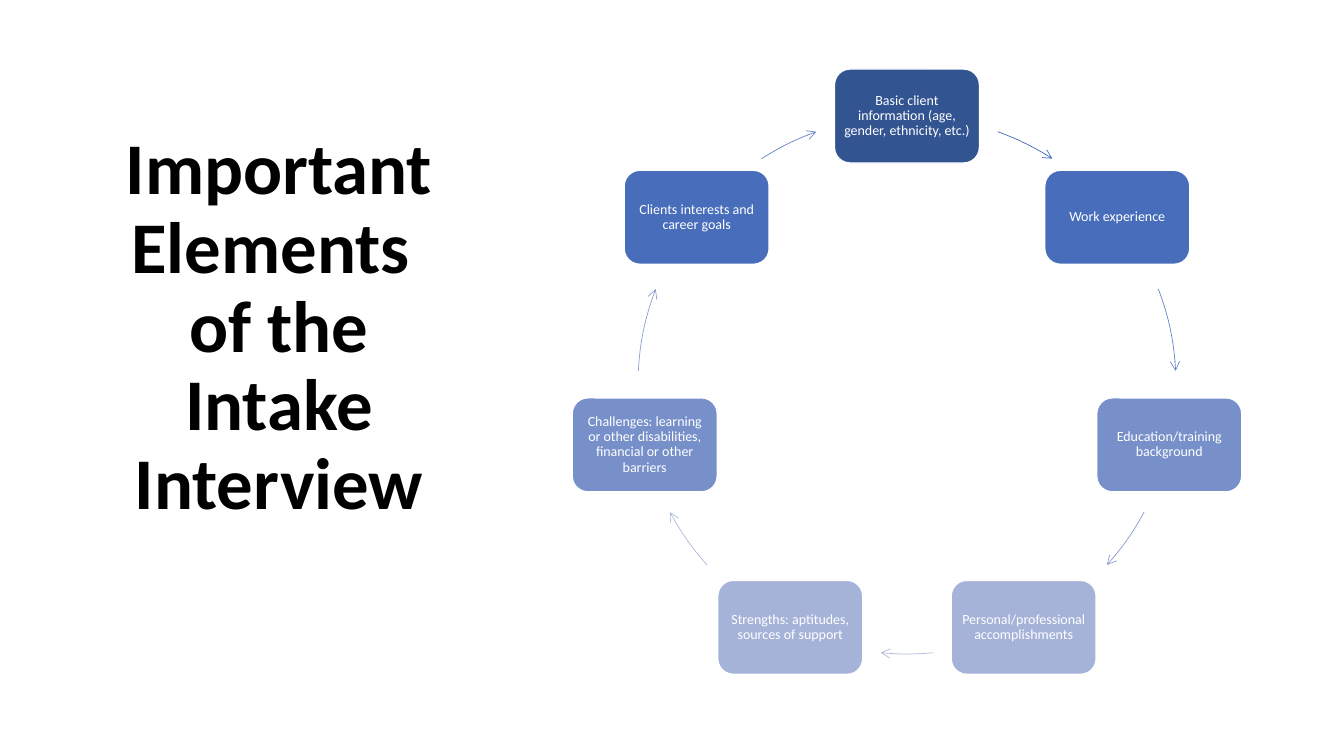
import math

from lxml import etree
from pptx import Presentation
from pptx.dml.color import RGBColor
from pptx.enum.shapes import MSO_SHAPE
from pptx.enum.text import MSO_ANCHOR, PP_ALIGN
from pptx.oxml.ns import qn
from pptx.util import Pt

ROUNDED = MSO_SHAPE.ROUNDED_RECTANGLE
ARC = MSO_SHAPE.ARC
CENTER = PP_ALIGN.CENTER
MIDDLE = MSO_ANCHOR.MIDDLE

EMU_PER_PX = 914400 / 100.8
FONT = "Calibri"
COLORS = {
    "title": "000000", "white": "FFFFFF",
    "navy": "325491", "blue": "476DBB", "soft": "7790C9", "pale": "A6B3D9",
    "arrow_blue": "416DBB", "arrow_mid": "6685C6",
    "arrow_soft": "8BA0D1", "arrow_pale": "AFBBDE",
}

# Clockwise from the top: text, box colour, colour of the arrow that follows
STEPS = [
    ("Basic client information (age, gender, ethnicity, etc.)", "navy", "arrow_blue"),
    ("Work experience", "blue", "arrow_mid"),
    ("Education/training background", "soft", "arrow_soft"),
    ("Personal/professional accomplishments", "pale", "arrow_pale"),
    ("Strengths: aptitudes, sources of support", "pale", "arrow_pale"),
    ("Challenges: learning or other disabilities, financial or other barriers",
     "soft", "arrow_soft"),
    ("Clients interests and career goals", "blue", "arrow_mid"),
]
# Start and end of each arrow, in degrees clockwise from the top
ARROW_ANGLES = [(19.7, 32.7), (69.1, 87), (118.2, 132), (174.4, 185.6),
                (228, 241.8), (273, 290.9), (327.3, 340.3)]
STEP_WIDTH, STEP_HEIGHT = 145, 94


def px(length):
    return round(length * EMU_PER_PX)


def color(name):
    return RGBColor.from_string(COLORS[name])


def write_text(shape, text, size, color_name, margins, bold=False):
    frame = shape.text_frame
    frame.word_wrap = True
    frame.vertical_anchor = MIDDLE
    (frame.margin_left, frame.margin_top,
     frame.margin_right, frame.margin_bottom) = map(px, margins)
    paragraph = frame.paragraphs[0]
    paragraph.text = text
    paragraph.alignment = CENTER
    paragraph.line_spacing = 0.9
    paragraph.font.name = FONT
    paragraph.font.size = Pt(size)
    paragraph.font.bold = bold
    paragraph.font.color.rgb = color(color_name)


def add_title(slide, left, top, width, height):
    box = slide.shapes.add_textbox(px(left), px(top), px(width), px(height))
    # The deep bottom margin lifts the title above the middle of its box
    write_text(box, "Important Elements \vof the Intake Interview", 52, "title",
               (10, 5, 10, 84), bold=True)


def add_step(slide, center_x, center_y, text, fill):
    shape = slide.shapes.add_shape(
        ROUNDED, px(center_x - STEP_WIDTH / 2), px(center_y - STEP_HEIGHT / 2),
        px(STEP_WIDTH), px(STEP_HEIGHT))
    shape.shadow.inherit = False
    shape.fill.solid()
    shape.fill.fore_color.rgb = color(fill)
    shape.line.color.rgb = color("white")
    shape.line.width = Pt(1)
    write_text(shape, text, 10, "white", (4, 4, 4, 4))


def add_arc_arrow(slide, left, top, diameter, angles, line_color):
    arc = slide.shapes.add_shape(ARC, px(left), px(top), px(diameter), px(diameter))
    arc.shadow.inherit = False
    arc.fill.background()
    arc.line.color.rgb = color(line_color)
    arc.line.width = Pt(0.5)
    # Arc angles run from three o'clock, in units of 0.6 per degree
    for index, angle in enumerate(angles):
        arc.adjustments[index] = (angle - 90) % 360 * 0.6
    line = arc.line._get_or_add_ln()
    etree.SubElement(line, qn("a:tailEnd")).set("type", "arrow")


def add_cycle(slide, left, top, diameter):
    radius = diameter / 2
    for index, (text, fill, arrow_color) in enumerate(STEPS):
        angle = math.tau * index / len(STEPS)
        add_step(slide, left + radius + radius * math.sin(angle),
                 top + radius - radius * math.cos(angle), text, fill)
        add_arc_arrow(slide, left, top, diameter, ARROW_ANGLES[index], arrow_color)


def main():
    presentation = Presentation()
    presentation.slide_width = px(1344)
    presentation.slide_height = px(756)
    slide = presentation.slides.add_slide(presentation.slide_layouts[6])
    add_title(slide, 93, 61, 372, 614)
    add_cycle(slide, 638, 116, 538)
    presentation.save("out.pptx")


if __name__ == "__main__":
    main()
